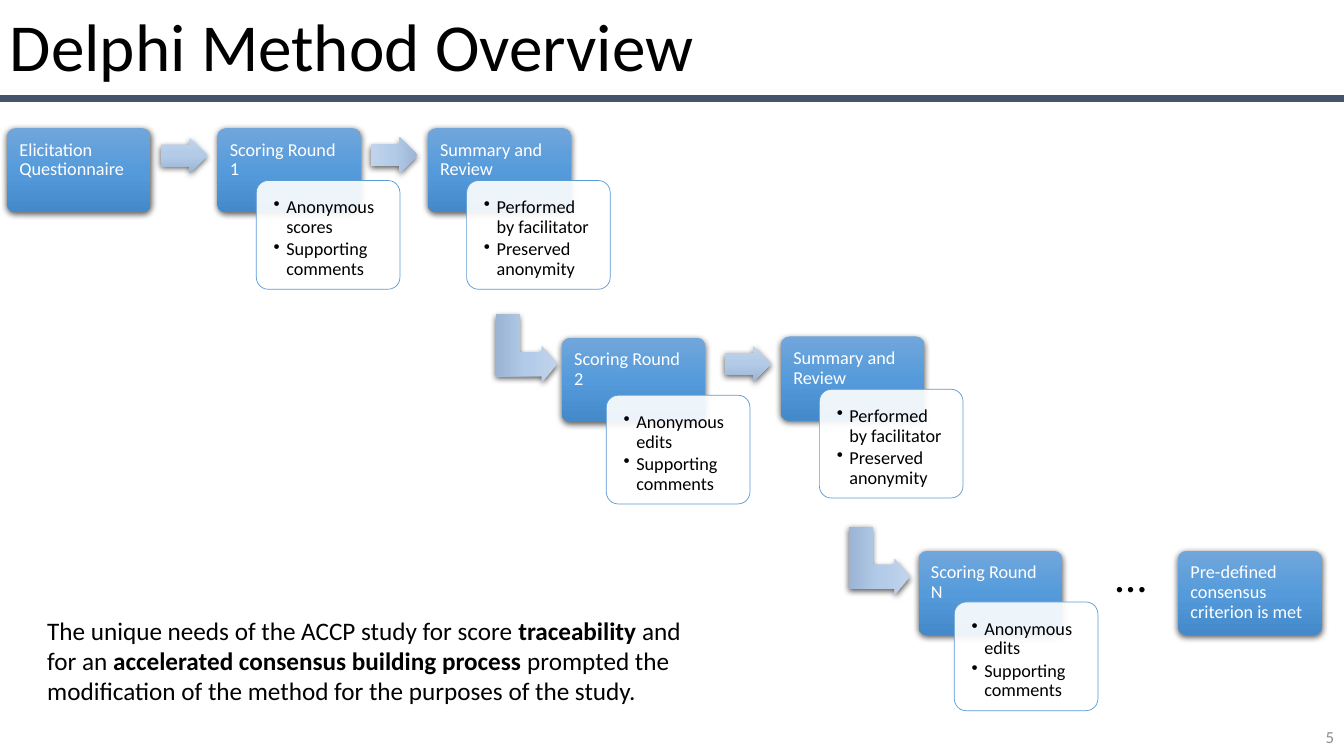
from copy import deepcopy
from dataclasses import dataclass

from lxml import etree
from pptx import Presentation
from pptx import util as u
from pptx.dml.color import RGBColor
from pptx.enum import shapes, text
from pptx.oxml.ns import qn


@dataclass(frozen=True)
class Theme:
    font: str = "Calibri"
    black: str = "000000"
    white: str = "FFFFFF"
    grey: str = "8C8C8C"
    rule: str = "44546A"
    outline: str = "5B9BD5"
    step_gradient: tuple = ("71A6DB", "559BDB", "448ACA")
    arrow_gradient: tuple = ("C0D3EB", "B3CBE9", "9BB4D3")
    title_size: int = 48
    dots_size: int = 32
    body_size: int = 18
    step_size: int = 13
    number_size: int = 12


theme = Theme()


def add_glossy(kind, box, colors, adjustments, angle=270):
    """Add a borderless shape with a three-stop gradient and a soft shadow."""
    shape = slide.shapes.add_shape(kind, *(u.Cm(value) for value in box))
    for index, value in enumerate(adjustments):
        shape.adjustments[index] = value
    shape.line.fill.background()
    shape.fill.gradient()
    shape.fill.gradient_angle = angle
    stops = shape._element.spPr.find(".//" + qn("a:gsLst"))
    stops.append(deepcopy(stops[-1]))
    for stop, color, position in zip(shape.fill.gradient_stops, colors, (0, 0.5, 1)):
        stop.color.rgb = RGBColor.from_string(color)
        stop.position = position
    shape.shadow.inherit = False
    effects = shape._element.spPr.find(qn("a:effectLst"))
    shadow = etree.SubElement(effects, qn("a:outerShdw"), blurRad=str(u.Pt(4.5)),
                              dist=str(u.Pt(1.5)), dir="5400000", rotWithShape="0")
    black = etree.SubElement(shadow, qn("a:srgbClr"), val=theme.black)
    etree.SubElement(black, qn("a:alpha"), val="63000")
    return shape


def style(paragraph, size, color, spacing=None, after=0):
    paragraph.font.name = theme.font
    paragraph.font.size = u.Pt(size)
    paragraph.font.color.rgb = RGBColor.from_string(color)
    paragraph.line_spacing = spacing
    paragraph.space_after = u.Pt(after)


presentation = Presentation()
presentation.slide_width = u.Cm(33.87)
presentation.slide_height = u.Cm(19.05)
slide = presentation.slides.add_slide(presentation.slide_layouts[6])

# Header rule
rule = slide.shapes.add_connector(shapes.MSO_CONNECTOR.STRAIGHT,
                                  0, u.Cm(2.49), presentation.slide_width, u.Cm(2.49))
rule.line.color.rgb = RGBColor.from_string(theme.rule)
rule.line.width = u.Pt(5)
etree.SubElement(rule._element.spPr, qn("a:effectLst"))

# Title, slide number, continuation dots and closing statement
statement = [
    ("The unique needs of the ACCP study for score ", False),
    ("traceability ", True),
    ("and for an ", False),
    ("accelerated consensus building process", True),
    (" prompted the modification of the method for the purposes of the study.", False),
]
middle, top = text.MSO_ANCHOR.MIDDLE, text.MSO_ANCHOR.TOP
left, right = text.PP_ALIGN.LEFT, text.PP_ALIGN.RIGHT
labels = [
    ((0, 0, 33.87, 2.49), [("Delphi Method Overview", False)],
     theme.title_size, theme.black, middle, left, 0.9),
    ((26.25, 18.05, 7.62, 1.02), [("5", False)],
     theme.number_size, theme.grey, middle, right, None),
    ((27.86, 13.67, 1, 1.62), [("…", False)],
     theme.dots_size, theme.black, top, left, None),
    ((0.94, 15.37, 16.84, 2.57), statement,
     theme.body_size, theme.black, top, left, None),
]
for box, runs, size, color, anchor, alignment, spacing in labels:
    frame = slide.shapes.add_textbox(*(u.Cm(value) for value in box)).text_frame
    frame.word_wrap = True
    frame.vertical_anchor = anchor
    paragraph = frame.paragraphs[0]
    paragraph.alignment = alignment
    style(paragraph, size, color, spacing)
    for words, bold in runs:
        run = paragraph.add_run()
        run.text = words
        if bold:
            run.font.bold = True

# Steps, each with an optional detail card: left, top, name, card position, bullets
review = ("Performed by facilitator", "Preserved anonymity")
edits = ("Anonymous edits", "Supporting comments")
steps = [
    (0.18, 3.23, "Elicitation Questionnaire", None, ()),
    (5.48, 3.23, "Scoring Round 1", (6.46, 4.55), ("Anonymous scores", "Supporting comments")),
    (10.78, 3.23, "Summary and Review", (11.76, 4.55), review),
    (14.16, 8.51, "Scoring Round 2", (15.28, 9.96), edits),
    (19.68, 8.48, "Summary and Review", (20.65, 9.81), review),
    (23.15, 13.88, "Scoring Round N", (24.05, 15.17), edits),
    (29.69, 13.88, "Pre-defined consensus criterion is met", None, ()),
]
for x, y, name, card_position, bullets in steps:
    step = add_glossy(shapes.MSO_SHAPE.ROUNDED_RECTANGLE, (x, y, 3.62, 2.12),
                      theme.step_gradient, [0.1])
    frame = step.text_frame
    frame.word_wrap = True
    frame.vertical_anchor = top
    frame.margin_left = frame.margin_right = frame.margin_top = u.Cm(0.25)
    frame.margin_bottom = u.Cm(0.84)
    paragraph = frame.paragraphs[0]
    paragraph.text = name
    paragraph.alignment = left
    style(paragraph, theme.step_size, theme.white, 0.9)
    if card_position is None:
        continue

    card = slide.shapes.add_shape(shapes.MSO_SHAPE.ROUNDED_RECTANGLE,
                                  *(u.Cm(value) for value in card_position),
                                  u.Cm(3.62), u.Cm(2.74))
    card.adjustments[0] = 0.11
    card.shadow.inherit = False
    card.fill.solid()
    card.fill.fore_color.rgb = RGBColor.from_string(theme.white)
    card_color = card._element.spPr.find(qn("a:solidFill"))[0]
    etree.SubElement(card_color, qn("a:alpha"), val="90000")
    card.line.color.rgb = RGBColor.from_string(theme.outline)
    card.line.width = u.Pt(0.5)
    frame = card.text_frame
    frame.word_wrap = True
    frame.vertical_anchor = top
    frame.margin_left = frame.margin_right = u.Cm(0.35)
    frame.margin_top = frame.margin_bottom = u.Cm(0.35)
    for index, bullet in enumerate(bullets):
        paragraph = frame.add_paragraph() if index else frame.paragraphs[0]
        paragraph.text = bullet
        paragraph.alignment = left
        properties = paragraph._p.get_or_add_pPr()
        properties.set("marL", str(u.Cm(0.32)))
        properties.set("indent", str(-u.Cm(0.32)))
        etree.SubElement(properties, qn("a:buChar"), char="•")
        style(paragraph, theme.step_size, theme.black, 0.9, after=2)

# Arrows along a row, then arrows down to the next row
for x, y, angle in [(4.06, 3.47, 270), (9.35, 3.46, 0), (18.26, 8.72, 270)]:
    add_glossy(shapes.MSO_SHAPE.RIGHT_ARROW, (x, y, 1.17, 0.9),
               theme.arrow_gradient, [0.6, 0.5], angle)
for x, y in [(12.42, 8), (21.31, 13.36)]:
    turn = add_glossy(shapes.MSO_SHAPE.BENT_UP_ARROW, (x, y, 1.7, 1.55),
                      theme.arrow_gradient, [0.39, 0.29, 0.25])
    turn.rotation = 90

presentation.save("out.pptx")
